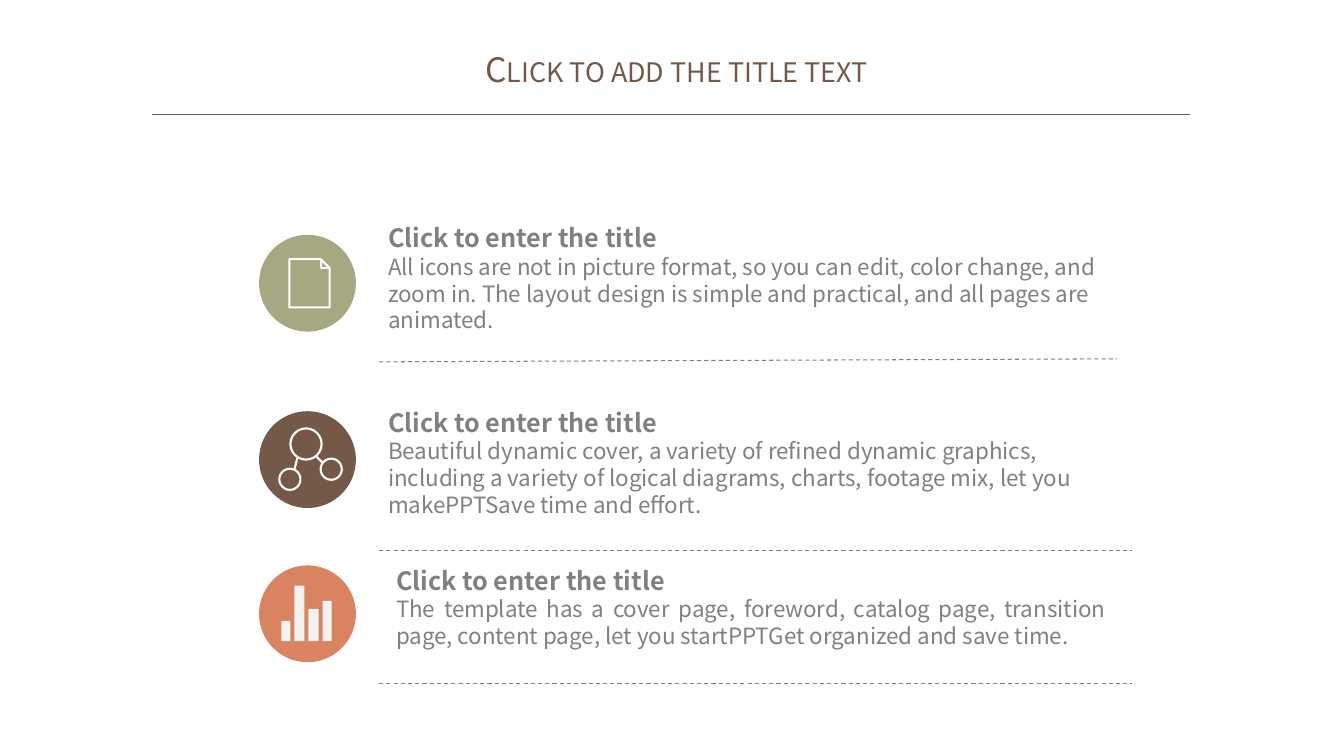
from pptx import Presentation
from pptx.dml.color import RGBColor
from pptx.enum.dml import MSO_LINE
from pptx.enum.shapes import MSO_CONNECTOR, MSO_SHAPE
from pptx.enum.text import MSO_ANCHOR, PP_ALIGN
from pptx.oxml.ns import qn
from pptx.util import Inches, Pt

FONT = "Noto Sans CJK SC"
BROWN, GRAY, WHITE = "745948", "808080", "FFFFFF"
BADGE_X, BADGE_SIZE = 2.57, 0.96
ICON_STROKE = 1.5
HEADING = "Click to enter the title"

# text left, top, width; body alignment; body wording
ENTRIES = [
    (3.75, 2.16, 7.32, PP_ALIGN.LEFT,
     "All icons are not in picture format, so you can edit, color change, and zoom in. "
     "The layout design is simple and practical, and all pages are animated."),
    (3.75, 3.99, 7.32, PP_ALIGN.LEFT,
     "Beautiful dynamic cover, a variety of refined dynamic graphics, including a variety "
     "of logical diagrams, charts, footage mix, let you makePPTSave time and effort."),
    (3.83, 5.56, 7.24, PP_ALIGN.JUSTIFY,
     "The template has a cover page, foreword, catalog page, transition page, content "
     "page, let you startPPTGet organized and save time."),
]
SEPARATORS = [(3.59, 11.08, 3.56), (5.46, 11.23, 5.46), (6.78, 11.23, 6.78)]


def rgb(color):
    return RGBColor.from_string(color)


def write(paragraph, text, size=16, color=GRAY, bold=False, align=PP_ALIGN.LEFT,
          small_caps=False):
    paragraph.alignment = align
    run = paragraph.add_run()
    run.text = text
    run.font.name, run.font.size, run.font.bold = FONT, Pt(size), bold
    run.font.color.rgb = rgb(color)
    properties = run.font._element
    if small_caps:
        properties.set("cap", "small")
    east_asian = properties.makeelement(qn("a:ea"), {"typeface": FONT})
    properties.find(qn("a:latin")).addnext(east_asian)


def paint(shape, fill=None, stroke=None):
    shape.shadow.inherit = False
    if fill:
        shape.fill.solid()
        shape.fill.fore_color.rgb = rgb(fill)
    else:
        shape.fill.background()
    if stroke:
        shape.line.color.rgb = rgb(stroke)
        shape.line.width = Pt(ICON_STROKE)
    else:
        shape.line.fill.background()


def add_line(slide, x1, y1, x2, y2, color=GRAY, width=0.75, dash=None):
    line = slide.shapes.add_connector(
        MSO_CONNECTOR.STRAIGHT, Inches(x1), Inches(y1), Inches(x2), Inches(y2))
    line.line.color.rgb = rgb(color)
    line.line.width = Pt(width)
    if dash:
        line.line.dash_style = dash
    properties = line._element.spPr
    properties.append(properties.makeelement(qn("a:effectLst"), {}))


def add_circle(slide, x, y, diameter, **colors):
    circle = slide.shapes.add_shape(
        MSO_SHAPE.OVAL, Inches(x), Inches(y), Inches(diameter), Inches(diameter))
    paint(circle, **colors)


def add_outline(slide, contours, close=True, **colors):
    builder = None
    for contour in contours:
        start, *rest = [(Inches(x), Inches(y)) for x, y in contour]
        if builder:
            builder.move_to(*start)
        else:
            builder = slide.shapes.build_freeform(*start)
        builder.add_line_segments(rest, close=close)
    paint(builder.convert_to_shape(), **colors)


def add_badge(slide, y, color):
    add_circle(slide, BADGE_X, y, BADGE_SIZE, fill=color)


def add_title(slide, text):
    title = slide.shapes.title
    title.left, title.top = Inches(4.58), Inches(0.44)
    title.width, title.height = Inches(4.26), Inches(0.48)
    frame = title.text_frame
    frame.margin_left = frame.margin_right = Inches(0.08)
    frame.margin_top = frame.margin_bottom = Inches(0.04)
    frame.vertical_anchor = MSO_ANCHOR.TOP
    frame.word_wrap = True
    write(frame.paragraphs[0], text, size=24, color=BROWN, align=PP_ALIGN.CENTER,
          small_caps=True)


def add_entry(slide, x, y, width, align, body):
    box = slide.shapes.add_textbox(Inches(x), Inches(y), Inches(width), Inches(0.94))
    frame = box.text_frame
    frame.word_wrap = True
    write(frame.paragraphs[0], HEADING, size=18, bold=True)
    write(frame.add_paragraph(), body, align=align)


def add_document_icon(slide):
    add_badge(slide, 2.33, "A6A881")
    left, top, right, bottom = 2.87, 2.57, 3.27, 3.05
    fold_x, fold_y = 3.18, 2.66
    page = [(left, top), (fold_x, top), (right, fold_y), (right, bottom), (left, bottom)]
    fold = [(fold_x, top), (fold_x, fold_y), (right, fold_y)]
    add_outline(slide, [page], stroke=WHITE)
    add_outline(slide, [fold], close=False, stroke=WHITE)


def add_network_icon(slide):
    add_badge(slide, 4.08, BROWN)
    for x, y, diameter in [(2.88, 4.25, 0.31), (2.77, 4.65, 0.21), (3.18, 4.55, 0.21)]:
        add_circle(slide, x, y, diameter, stroke=WHITE)
    for link in [(2.95, 4.54, 2.92, 4.66), (3.14, 4.53, 3.2, 4.59)]:
        add_line(slide, *link, color=WHITE, width=ICON_STROKE)


def add_bars_icon(slide):
    add_badge(slide, 5.61, "D98360")
    base = 6.36
    bars = [(2.79, 2.88, 6.16), (2.92, 3.02, 5.81), (3.06, 3.16, 6.04), (3.2, 3.29, 5.96)]
    add_outline(slide, [[(left, base), (right, base), (right, top), (left, top)]
                        for left, right, top in bars], fill="F2F2F2")


def main():
    presentation = Presentation()
    presentation.slide_width, presentation.slide_height = Inches(13.33), Inches(7.5)
    slide = presentation.slides.add_slide(presentation.slide_layouts[5])

    # Heading
    add_title(slide, "Click to add the title text")
    add_line(slide, 1.51, 1.14, 11.8, 1.14, color=BROWN)

    # Entries and their separators
    for entry in ENTRIES:
        add_entry(slide, *entry)
    for start_y, end_x, end_y in SEPARATORS:
        add_line(slide, 3.76, start_y, end_x, end_y, dash=MSO_LINE.DASH)

    # Icons
    add_document_icon(slide)
    add_network_icon(slide)
    add_bars_icon(slide)

    presentation.save("out.pptx")


if __name__ == "__main__":
    main()
